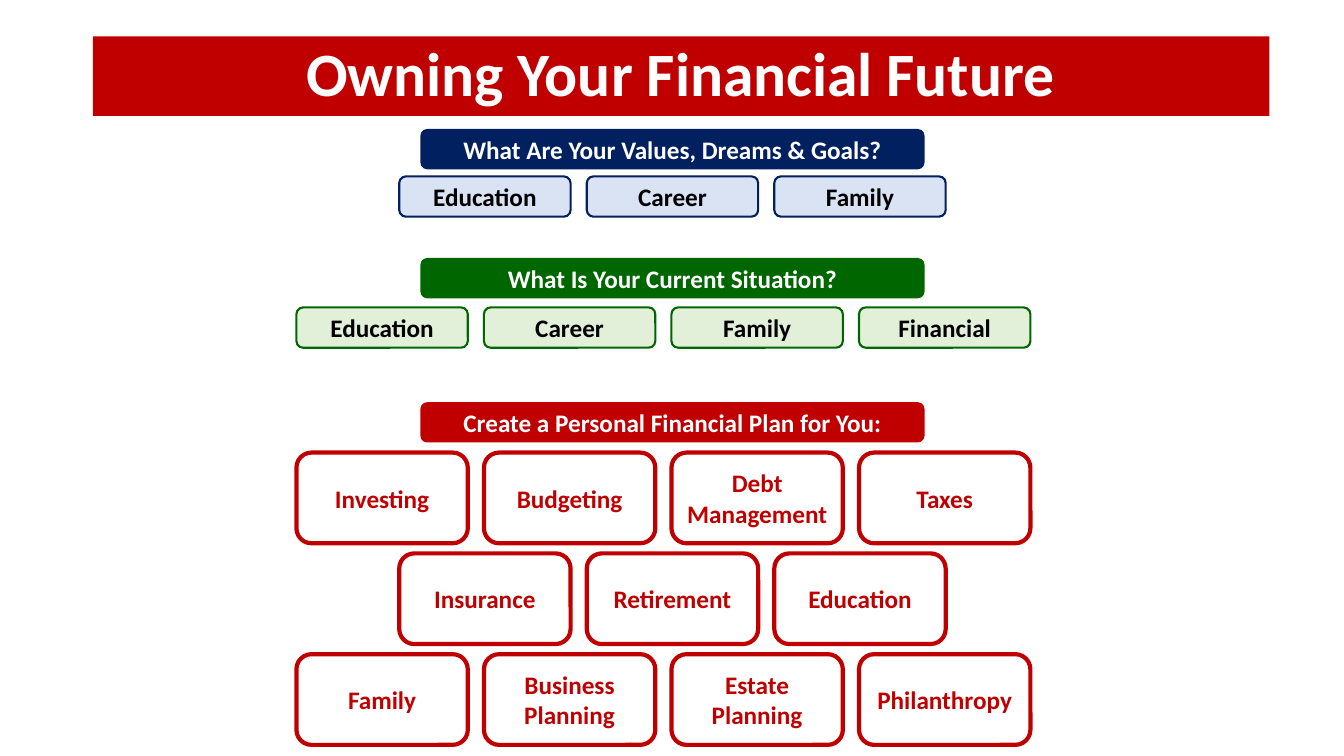
import pptx
import pptx.util
from pptx.dml.color import RGBColor
from pptx.enum.shapes import MSO_SHAPE
from pptx.enum.text import MSO_ANCHOR, MSO_AUTO_SIZE, PP_ALIGN
from pptx.util import Inches

WHITE = RGBColor(0xFF, 0xFF, 0xFF)
BLACK = RGBColor(0x00, 0x00, 0x00)
RED = RGBColor(0xC0, 0x00, 0x00)
NAVY = RGBColor(0x00, 0x20, 0x60)
PALE_BLUE = RGBColor(0xDA, 0xE3, 0xF3)
GREEN = RGBColor(0x00, 0x66, 0x00)
PALE_GREEN = RGBColor(0xE2, 0xF0, 0xD9)

TOPIC_WIDTH = 1.7
TOPIC_STEP = 1.86
FOUR_LEFT = 2.94
THREE_LEFT = 3.96


class PlanSlide:
    font_name = "Calibri"

    def __init__(self, slide):
        self.slide = slide

    def set_label(self, shape, text, size, color):
        frame = shape.text_frame
        frame.text = text
        frame.word_wrap = True
        frame.vertical_anchor = MSO_ANCHOR.MIDDLE
        paragraph = frame.paragraphs[0]
        paragraph.alignment = PP_ALIGN.CENTER
        font = paragraph.runs[0].font
        font.name = self.font_name
        font.size = pptx.util.Pt(size)
        font.bold = True
        font.color.rgb = color

    def title(self, text):
        heading = self.slide.shapes.title
        heading.left, heading.top = Inches(0.92), Inches(0.36)
        heading.width, heading.height = Inches(11.67), Inches(0.79)
        heading.fill.solid()
        heading.fill.fore_color.rgb = RED
        self.set_label(heading, text, 44, WHITE)
        heading.text_frame.auto_size = MSO_AUTO_SIZE.NONE
        heading.text_frame.paragraphs[0].line_spacing = 0.9

    def box(self, text, left, top, width, height, fill, text_color):
        box = self.slide.shapes.add_shape(
            MSO_SHAPE.ROUNDED_RECTANGLE,
            Inches(left), Inches(top), Inches(width), Inches(height))
        box.shadow.inherit = False
        box.fill.solid()
        box.fill.fore_color.rgb = fill
        box.line.fill.background()
        self.set_label(box, text, 18, text_color)
        return box

    def banner(self, text, top, fill):
        self.box(text, 4.17, top, 5, 0.4, fill, WHITE)

    def topic_row(self, topics, left, top, height, fill, outline,
                  outline_width, text_color):
        for column, topic in enumerate(topics):
            box = self.box(topic, left + column * TOPIC_STEP, top,
                           TOPIC_WIDTH, height, fill, text_color)
            box.line.color.rgb = outline
            box.line.width = pptx.util.Pt(outline_width)


def main():
    deck = pptx.Presentation()
    deck.slide_width, deck.slide_height = Inches(13.33), Inches(7.5)
    plan = PlanSlide(deck.slides.add_slide(deck.slide_layouts[5]))

    plan.title("Owning Your Financial Future")

    plan.banner("What Are Your Values, Dreams & Goals?", 1.28, NAVY)
    plan.topic_row(["Education", "Career", "Family"],
                   THREE_LEFT, 1.75, 0.4, PALE_BLUE, NAVY, 1.5, BLACK)

    plan.banner("What Is Your Current Situation?", 2.56, GREEN)
    plan.topic_row(["Education", "Career", "Family", "Financial"],
                   FOUR_LEFT, 3.05, 0.4, PALE_GREEN, GREEN, 1.5, BLACK)

    plan.banner("Create a Personal Financial Plan for You:", 3.99, RED)
    plan_rows = [
        (FOUR_LEFT, ["Investing", "Budgeting", "Debt Management", "Taxes"]),
        (THREE_LEFT, ["Insurance", "Retirement", "Education"]),
        (FOUR_LEFT, ["Family", "Business Planning", "Estate Planning",
                     "Philanthropy"]),
    ]
    for row, (left, topics) in enumerate(plan_rows):
        plan.topic_row(topics, left, 4.49 + row, 0.9, WHITE, RED, 3, RED)

    deck.save("out.pptx")


if __name__ == "__main__":
    main()
